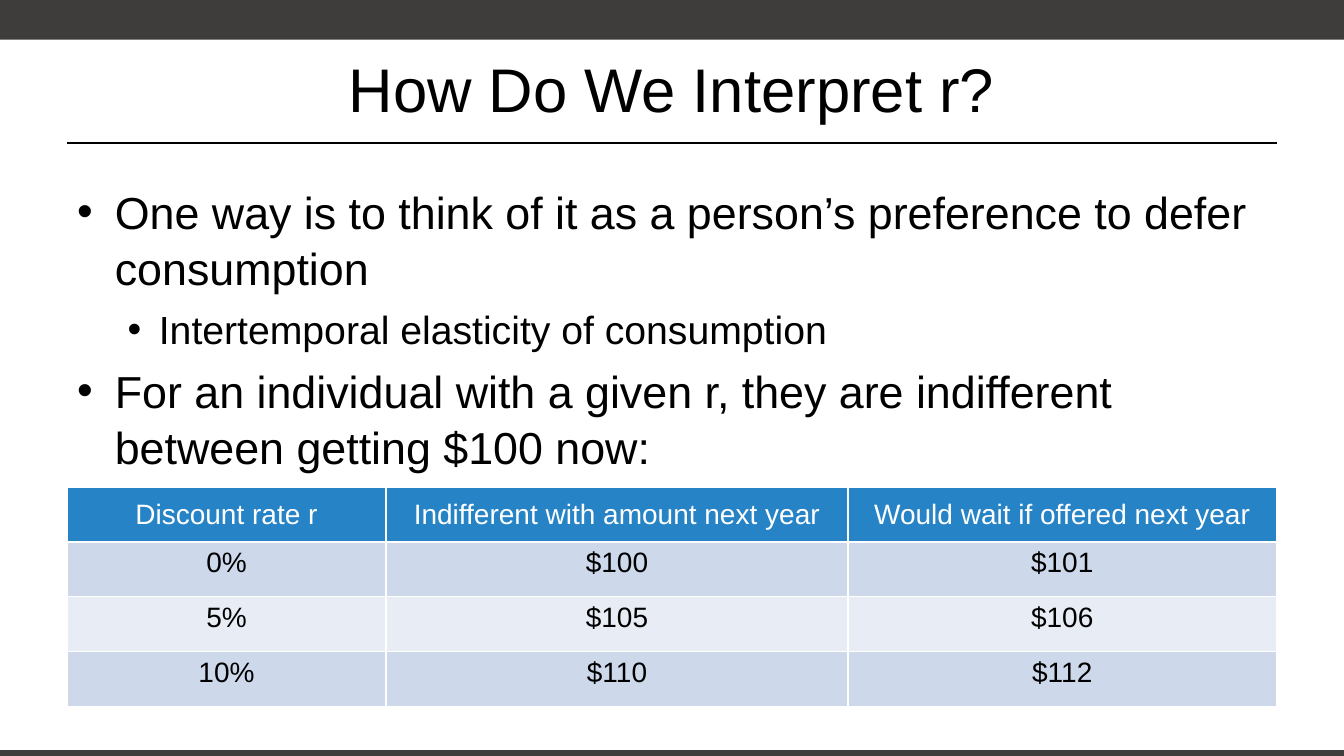
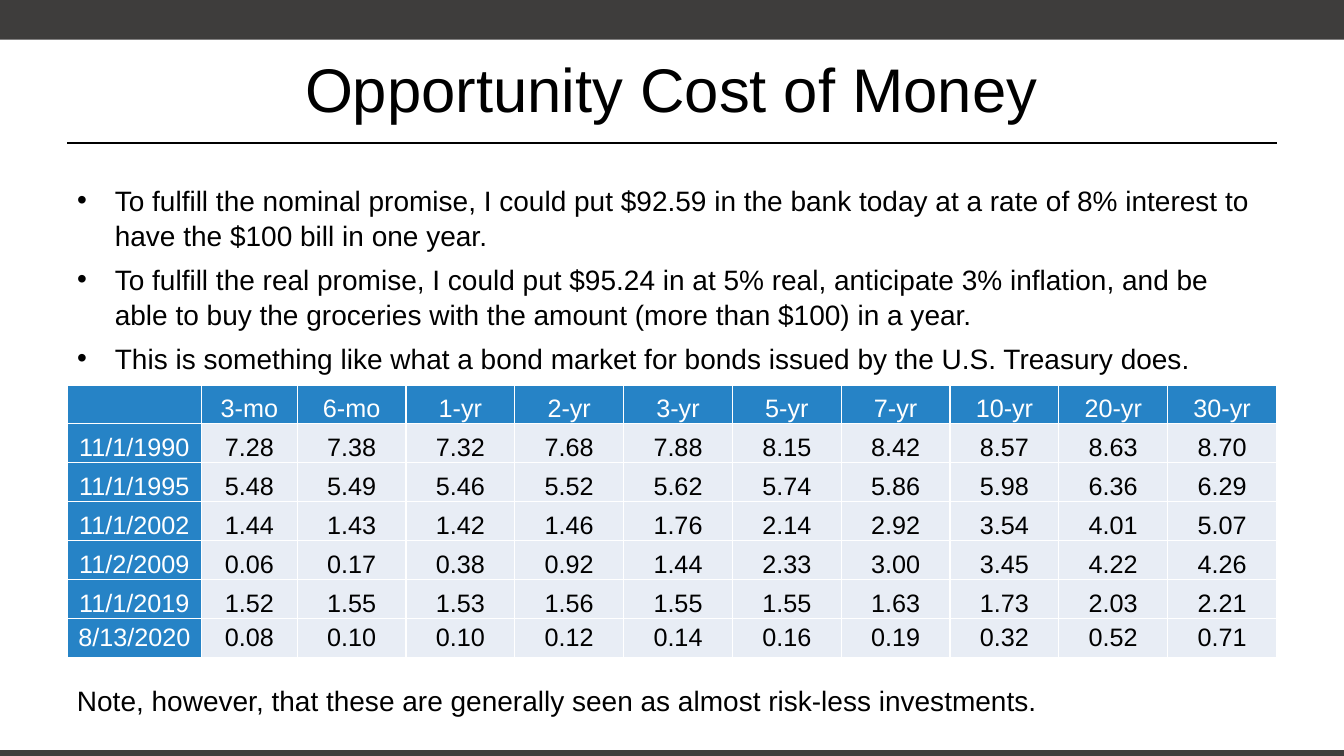
"""Build two slides on discount rates and the opportunity cost of money."""
from dataclasses import dataclass

from lxml.etree import SubElement
from pptx import Presentation
from pptx.dml.color import RGBColor
from pptx.enum.shapes import MSO_CONNECTOR, MSO_SHAPE
from pptx.enum.text import MSO_ANCHOR, MSO_AUTO_SIZE, PP_ALIGN
from pptx.oxml.ns import qn
from pptx.util import Cm, Pt


@dataclass(frozen=True)
class Theme:
    font: str = "Arial"
    text: str = "000000"
    white: str = "FFFFFF"
    band: str = "3E3D3C"
    header: str = "2683C6"
    row_dark: str = "CDD9EA"
    row_light: str = "E8EDF5"
    title_size: int = 44
    large_size: int = 32
    medium_size: int = 28
    small_size: int = 20
    data_size: int = 18
    rule_width: float = 1.25
    border_width: float = 1


THEME = Theme()
SLIDE_WIDTH, SLIDE_HEIGHT = 33.87, 19.05
LEFT, CONTENT_WIDTH = 1.69, 30.48
BODY_TOP = 4.45
RULE_TOP = 3.61
BANDS = [(0, 1), (18.9, 0.15)]
BULLET_INDENTS = [(0.95, 0.95), (2.06, 0.79)]
EVEN_INSETS = (0.13, 0.13)
LOW_INSETS = (0.24, 0)

SLIDES = [
    {
        "title": "How Do We Interpret r?",
        "body_height": 7.4,
        "bullet_sizes": [THEME.large_size, THEME.medium_size],
        "bullets": [
            (0, "One way is to think of it as a person’s preference to defer consumption"),
            (1, "Intertemporal elasticity of consumption"),
            (0, "For an individual with a given r, they are indifferent between getting $100 now:"),
        ],
        "table": {
            "top": 12.28,
            "row_height": 1.38,
            "widths": [8.04, 11.64, 10.8],
            "size": THEME.small_size,
            "row_insets": [EVEN_INSETS] * 4,
            "body_anchor": MSO_ANCHOR.TOP,
            "row_fills": [THEME.row_dark, THEME.row_light],
            "header_columns": 0,
            "rows": [
                ["Discount rate r", "Indifferent with amount next year", "Would wait if offered next year"],
                ["0%", "$100", "$101"],
                ["5%", "$105", "$106"],
                ["10%", "$110", "$112"],
            ],
        },
    },
    {
        "title": "Opportunity Cost of Money",
        "body_height": 5.08,
        "bullet_sizes": [THEME.small_size],
        "bullets": [
            (0, "To fulfill the nominal promise, I could put $92.59 in the bank today at a rate of 8% interest to have the $100 bill in one year."),
            (0, "To fulfill the real promise, I could put $95.24 in at 5% real, anticipate 3% inflation, and be able to buy the groceries with the amount (more than $100) in a year."),
            (0, "This is something like what a bond market for bonds issued by the U.S. Treasury does."),
        ],
        "table": {
            "top": 9.7,
            "row_height": 0.98,
            "widths": [3.39, 2.41] + [(CONTENT_WIDTH - 5.8) / 9] * 9,
            "size": THEME.data_size,
            "row_insets": [LOW_INSETS] * 6 + [EVEN_INSETS],
            "body_anchor": MSO_ANCHOR.MIDDLE,
            "row_fills": [THEME.row_light],
            "header_columns": 1,
            "rows": [
                ["", "3-mo", "6-mo", "1-yr", "2-yr", "3-yr", "5-yr", "7-yr", "10-yr", "20-yr", "30-yr"],
                ["11/1/1990", "7.28", "7.38", "7.32", "7.68", "7.88", "8.15", "8.42", "8.57", "8.63", "8.70"],
                ["11/1/1995", "5.48", "5.49", "5.46", "5.52", "5.62", "5.74", "5.86", "5.98", "6.36", "6.29"],
                ["11/1/2002", "1.44", "1.43", "1.42", "1.46", "1.76", "2.14", "2.92", "3.54", "4.01", "5.07"],
                ["11/2/2009", "0.06", "0.17", "0.38", "0.92", "1.44", "2.33", "3.00", "3.45", "4.22", "4.26"],
                ["11/1/2019", "1.52", "1.55", "1.53", "1.56", "1.55", "1.55", "1.63", "1.73", "2.03", "2.21"],
                ["8/13/2020", "0.08", "0.10", "0.10", "0.12", "0.14", "0.16", "0.19", "0.32", "0.52", "0.71"],
            ],
        },
        "note": "Note, however, that these are generally seen as almost risk-less investments.",
    },
]


def color(value):
    return RGBColor.from_string(value)


def place(shape, left, top, width, height):
    shape.left, shape.top = Cm(left), Cm(top)
    shape.width, shape.height = Cm(width), Cm(height)


def add_text(paragraph, text, size, text_color=THEME.text):
    run = paragraph.add_run()
    run.text = text
    run.font.name = THEME.font
    run.font.size = Pt(size)
    run.font.color.rgb = color(text_color)


def style_layout(layout):
    title, body = layout.placeholders[0], layout.placeholders[1]
    place(title, LEFT, 0.64, CONTENT_WIDTH, 3.17)
    title.text_frame.vertical_anchor = MSO_ANCHOR.MIDDLE
    place(body, LEFT, BODY_TOP, CONTENT_WIDTH, SLIDES[0]["body_height"])


def move_frame_to_layout(slide, layout):
    frame = []
    for top, height in BANDS:
        band = slide.shapes.add_shape(MSO_SHAPE.RECTANGLE, 0, Cm(top), Cm(SLIDE_WIDTH), Cm(height))
        band.shadow.inherit = False
        band.fill.solid()
        band.fill.fore_color.rgb = color(THEME.band)
        band.line.fill.background()
        frame.append(band)
    rule = slide.shapes.add_connector(
        MSO_CONNECTOR.STRAIGHT, Cm(LEFT), Cm(RULE_TOP), Cm(LEFT + CONTENT_WIDTH), Cm(RULE_TOP)
    )
    rule.line.color.rgb = color(THEME.text)
    rule.line.width = Pt(THEME.rule_width)
    SubElement(rule.element.spPr, qn("a:effectLst"))
    frame.append(rule)
    for shape_id, shape in enumerate(frame, start=20):
        shape.element.xpath(".//p:cNvPr")[0].set("id", str(shape_id))
        layout.shapes.element.append(shape.element)


def add_title(slide, text):
    paragraph = slide.shapes.title.text_frame.paragraphs[0]
    paragraph.alignment = PP_ALIGN.CENTER
    add_text(paragraph, text, THEME.title_size)


def add_bullets(slide, content):
    body = slide.placeholders[1]
    place(body, LEFT, BODY_TOP, CONTENT_WIDTH, content["body_height"])
    frame = body.text_frame
    frame.auto_size = MSO_AUTO_SIZE.NONE
    for index, (level, text) in enumerate(content["bullets"]):
        paragraph = frame.add_paragraph() if index else frame.paragraphs[0]
        paragraph.level = level
        paragraph.space_before = Pt(6)
        paragraph.line_spacing = 1.05
        margin, hanging = BULLET_INDENTS[level]
        properties = paragraph._p.get_or_add_pPr()
        properties.set("marL", str(Cm(margin)))
        properties.set("indent", str(-Cm(hanging)))
        SubElement(properties, qn("a:buFont"), typeface=THEME.font)
        SubElement(properties, qn("a:buChar"), char="•")
        add_text(paragraph, text, content["bullet_sizes"][level])


def add_borders(cell):
    properties = cell._tc.get_or_add_tcPr()
    for side in ("lnL", "lnR", "lnT", "lnB"):
        border = SubElement(properties, qn(f"a:{side}"), w=str(Pt(THEME.border_width)))
        fill = SubElement(border, qn("a:solidFill"))
        SubElement(fill, qn("a:srgbClr"), val=THEME.white)


def fill_cell(cell, text, size, fill, text_color, anchor, insets):
    add_borders(cell)
    cell.fill.solid()
    cell.fill.fore_color.rgb = color(fill)
    cell.vertical_anchor = anchor
    top, bottom = insets if text else (0, 0)
    cell.margin_top, cell.margin_bottom = Cm(top), Cm(bottom)
    if text:
        paragraph = cell.text_frame.paragraphs[0]
        paragraph.alignment = PP_ALIGN.CENTER
        add_text(paragraph, text, size, text_color)


def add_data_table(slide, content):
    rows, widths = content["rows"], content["widths"]
    table = slide.shapes.add_table(
        len(rows), len(widths), Cm(LEFT), Cm(content["top"]),
        Cm(CONTENT_WIDTH), Cm(content["row_height"] * len(rows)),
    ).table
    table.first_row = table.horz_banding = False
    for column, width in zip(table.columns, widths):
        column.width = Cm(width)
    fills = content["row_fills"]
    for row_index, (values, insets) in enumerate(zip(rows, content["row_insets"])):
        table.rows[row_index].height = Cm(content["row_height"])
        anchor = content["body_anchor"] if row_index else MSO_ANCHOR.MIDDLE
        for column_index, text in enumerate(values):
            is_header = row_index == 0 or column_index < content["header_columns"]
            fill = THEME.header if is_header else fills[(row_index - 1) % len(fills)]
            text_color = THEME.white if is_header else THEME.text
            cell = table.cell(row_index, column_index)
            fill_cell(cell, text, content["size"], fill, text_color, anchor, insets)


def add_note(slide, text):
    note = slide.shapes.add_textbox(Cm(LEFT), Cm(17.1), Cm(CONTENT_WIDTH), Cm(1.11))
    note.text_frame.word_wrap = True
    add_text(note.text_frame.paragraphs[0], text, THEME.small_size)


def main():
    presentation = Presentation()
    presentation.slide_width, presentation.slide_height = Cm(SLIDE_WIDTH), Cm(SLIDE_HEIGHT)
    layout = presentation.slide_layouts[1]
    style_layout(layout)
    for index, content in enumerate(SLIDES):
        slide = presentation.slides.add_slide(layout)
        if index == 0:
            move_frame_to_layout(slide, layout)
        add_title(slide, content["title"])
        add_bullets(slide, content)
        add_data_table(slide, content["table"])
        if "note" in content:
            add_note(slide, content["note"])
    presentation.save("out.pptx")


if __name__ == "__main__":
    main()
